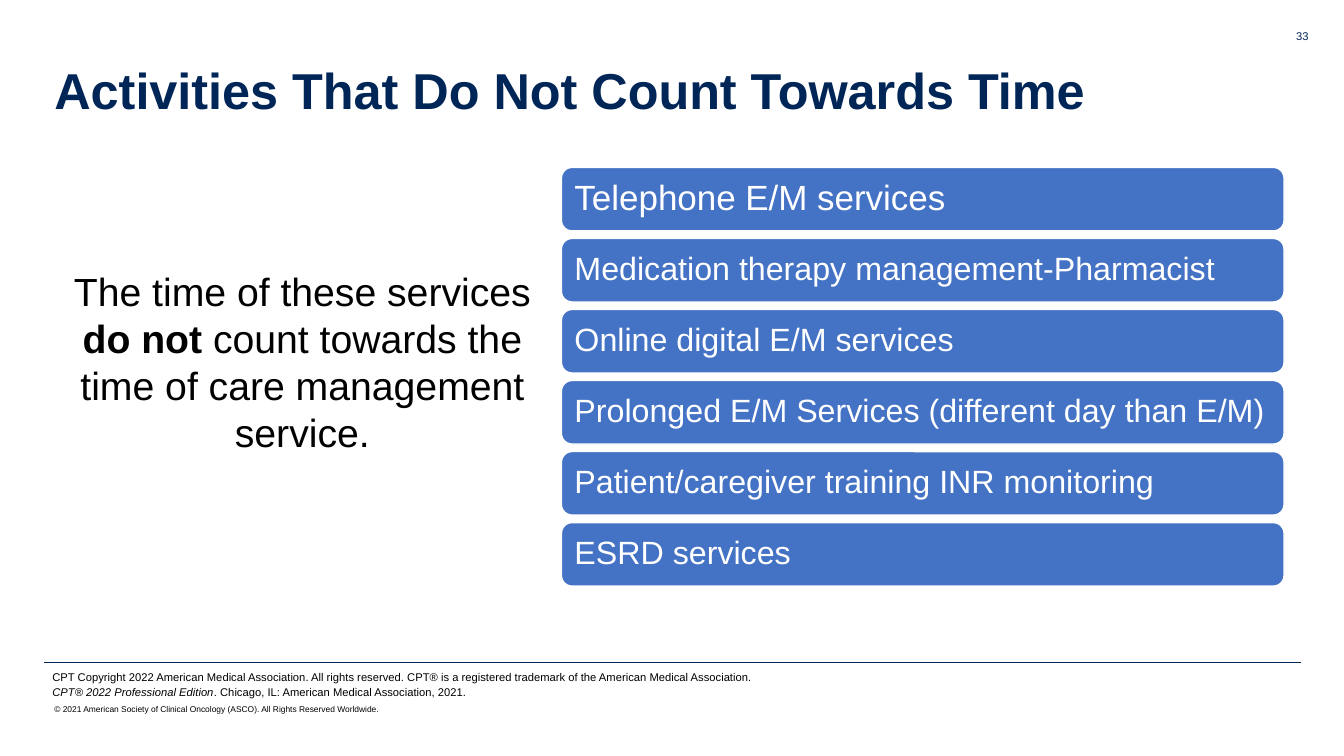
"""Build the slide on activities that do not count towards care management time."""
import dataclasses
import typing

import lxml.etree
import pptx
import pptx.dml.color
import pptx.enum.shapes
import pptx.enum.text
import pptx.oxml.ns
import pptx.presentation
import pptx.shapes.base
import pptx.slide
import pptx.util

Cm = pptx.util.Cm
Align = pptx.enum.text.PP_ALIGN
Anchor = pptx.enum.text.MSO_ANCHOR


@dataclasses.dataclass(frozen=True)
class Theme:
    """Colours, font and type sizes of the slide."""
    font: str = "Arial"
    navy: str = "002557"
    blue: str = "4472C4"
    white: str = "FFFFFF"
    black: str = "000000"
    title: float = 36
    body: float = 28
    first_bar: float = 25
    bar: float = 23
    note: float = 8
    copyright: float = 6


THEME = Theme()


class Run(typing.NamedTuple):
    """A piece of text with its own emphasis."""
    text: str
    bold: bool = False
    italic: bool = False


class Box(typing.NamedTuple):
    """A text box with its place in centimetres and its style."""
    at: tuple[float, float, float, float]
    runs: tuple[Run, ...]
    size: float
    color: str = THEME.black
    align: Align = Align.LEFT
    anchor: Anchor = Anchor.TOP
    leading: float = 1.0


BOXES = (
    Box((1.12, 1.02, 30.43, 2.67),
        (Run("Activities That Do Not Count Towards Time", bold=True),),
        THEME.title, THEME.navy, anchor=Anchor.MIDDLE, leading=0.9),
    Box((30.84, 0.61, 2.39, 1.02), (Run("33"),), THEME.note, THEME.navy, Align.RIGHT),
    Box((1.42, 6.6, 12.4, 5.05),
        (Run("The time of these services "), Run("do not ", bold=True),
         Run("count towards the time of care management service.")),
        THEME.body, align=Align.CENTER),
    Box((1.07, 16.76, 22.96, 0.61),
        (Run("CPT Copyright 2022 American Medical Association. All rights reserved. "
             "CPT® is a registered trademark of the American Medical Association."),),
        THEME.note),
    Box((1.07, 17.15, 12.14, 0.61),
        (Run("CPT® 2022 Professional Edition", italic=True),
         Run(". Chicago, IL: American Medical Association, 2021.")),
        THEME.note),
    Box((1.12, 17.37, 11.43, 1.02),
        (Run("© 2021 American Society of Clinical Oncology (ASCO). "
             "All Rights Reserved Worldwide."),),
        THEME.copyright, anchor=Anchor.MIDDLE),
)

SERVICES = (
    "Telephone E/M services",
    "Medication therapy management-Pharmacist",
    "Online digital E/M services",
    "Prolonged E/M Services (different day than E/M)",
    "Patient/caregiver training INR monitoring",
    "ESRD services",
)
BAR_LEFT, BAR_TOP, BAR_WIDTH, BAR_HEIGHT, BAR_PITCH = 14.15, 4.22, 18.21, 1.6, 1.79
BAR_INSET = Cm(0.25)


def rgb(color: str) -> pptx.dml.color.RGBColor:
    """Turn a hex string into a colour."""
    return pptx.dml.color.RGBColor.from_string(color)


def assign(target: object, values: dict[str, object]) -> None:
    """Set every named attribute on the target."""
    for name, value in values.items():
        setattr(target, name, value)


def write(sp: pptx.shapes.base.BaseShape, box: Box) -> None:
    """Put the runs of a box into a shape."""
    tf = sp.text_frame
    assign(tf, {"word_wrap": True, "vertical_anchor": box.anchor})
    p = tf.paragraphs[0]
    assign(p, {"alignment": box.align, "line_spacing": box.leading})
    for run in box.runs:
        r = p.add_run()
        r.text = run.text
        assign(r.font, {"name": THEME.font, "size": pptx.util.Pt(box.size),
                        "bold": run.bold, "italic": run.italic})
        r.font.color.rgb = rgb(box.color)


def add_text(s: pptx.slide.Slide, box: Box) -> None:
    """Draw one text box."""
    write(s.shapes.add_textbox(*map(Cm, box.at)), box)


def add_bar(s: pptx.slide.Slide, index: int, service: str) -> None:
    """Draw one rounded bar of the service list."""
    at = (BAR_LEFT, BAR_TOP + index * BAR_PITCH, BAR_WIDTH, BAR_HEIGHT)
    kind = pptx.enum.shapes.MSO_SHAPE.ROUNDED_RECTANGLE
    sp = s.shapes.add_shape(kind, *map(Cm, at))
    sp.shadow.inherit = False
    sp.fill.solid()
    sp.fill.fore_color.rgb = rgb(THEME.blue)
    sp.line.color.rgb = rgb(THEME.white)
    sp.line.width = pptx.util.Pt(1)
    sides = ("left", "top", "right", "bottom")
    assign(sp.text_frame, {f"margin_{side}": BAR_INSET for side in sides})
    size = THEME.bar if index else THEME.first_bar
    write(sp, Box(at, (Run(service),), size, THEME.white,
                  anchor=Anchor.MIDDLE, leading=0.9))


def add_rule(s: pptx.slide.Slide) -> None:
    """Draw the thin line above the footer."""
    kind = pptx.enum.shapes.MSO_CONNECTOR.STRAIGHT
    rule = s.shapes.add_connector(kind, *map(Cm, (1.12, 16.69, 32.79, 16.69)))
    rule.line.color.rgb = rgb(THEME.navy)
    rule.line.width = pptx.util.Pt(0.25)
    lxml.etree.SubElement(rule.element.spPr, pptx.oxml.ns.qn("a:effectLst"))


def main() -> None:
    """Assemble and save the slide."""
    prs = pptx.Presentation()
    assign(prs, {"slide_width": Cm(33.87), "slide_height": Cm(19.05)})
    s = prs.slides.add_slide(prs.slide_layouts[6])
    add_rule(s)
    for index, service in enumerate(SERVICES):
        add_bar(s, index, service)
    for box in BOXES:
        add_text(s, box)
    prs.save("out.pptx")


if __name__ == "__main__":
    main()
